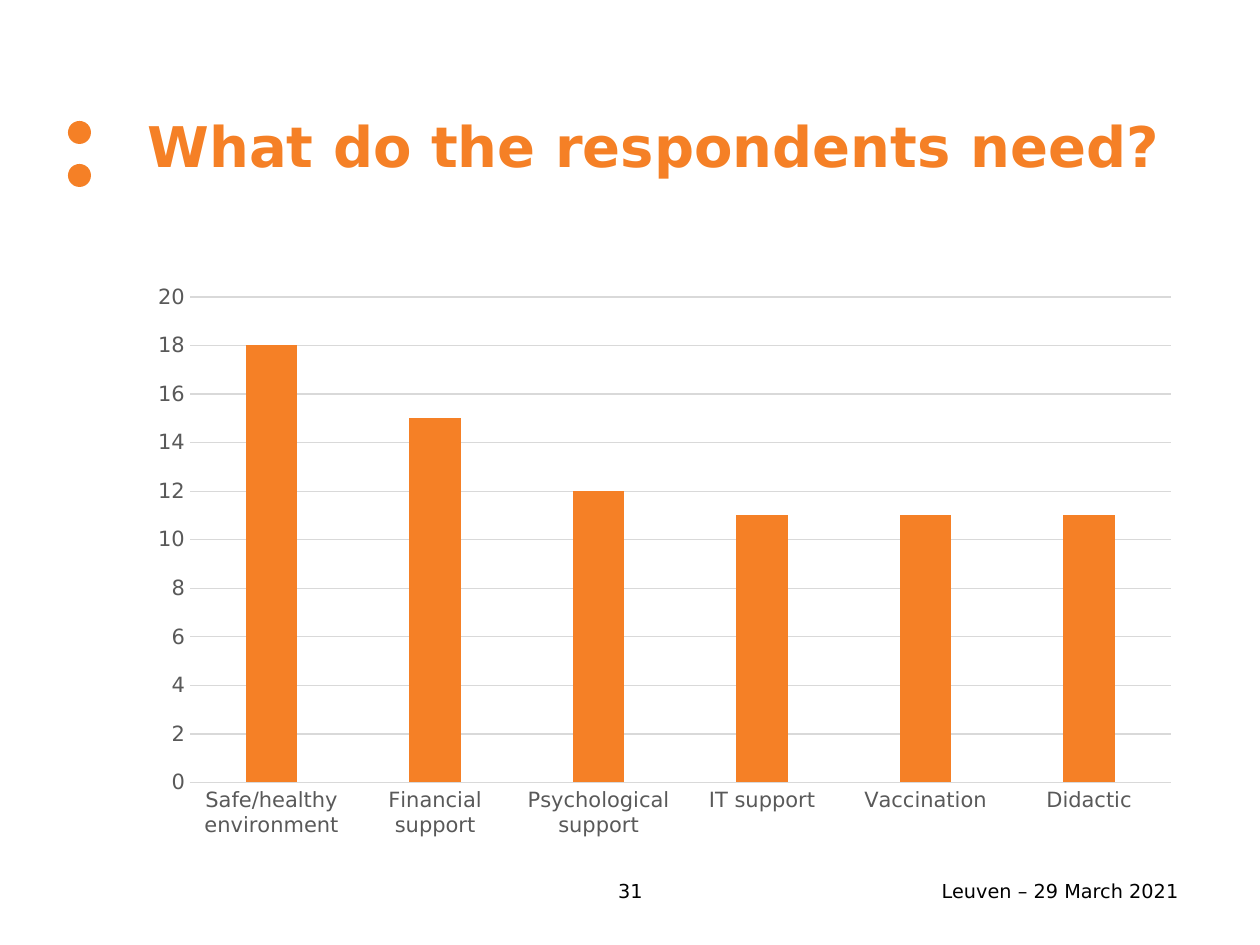
from pptx import Presentation
from pptx import util as u
from pptx.chart import data
from pptx.dml.color import RGBColor
from pptx.enum import chart as ch, shapes, text

FONT = "DejaVu Sans"
ORANGE, GREY, LINE = "F58026", "595959", "D9D9D9"


def px(*vals):
    return [u.Emu(round(v * 914400 / 126)) for v in vals]


def style(font, size, color, bold=False):
    font.name, font.size, font.bold = FONT, u.Pt(size), bold
    font.color.rgb = RGBColor.from_string(color)


prs = Presentation()
prs.slide_width, prs.slide_height = px(1260, 945)
slide = prs.slides.add_slide(prs.slide_layouts[6])

# Two dots beside the title
for top in (121, 164):
    dot = slide.shapes.add_shape(shapes.MSO_SHAPE.OVAL, *px(68, top, 23, 23))
    dot.shadow.inherit = False
    dot.fill.solid()
    dot.fill.fore_color.rgb = RGBColor.from_string(ORANGE)
    dot.line.fill.background()

# Title, date and page number
left, mid, right = text.PP_ALIGN.LEFT, text.PP_ALIGN.CENTER, text.PP_ALIGN.RIGHT
for words, spot, size, color, bold, align in (
    ("What do the respondents need?", (135, 67, 1055, 157), 32, ORANGE, True, left),
    ("Leuven – 29 March 2021", (784, 866, 407, 50), 11, "000000", False, right),
    ("31", (543, 866, 175, 50), 11, "000000", False, mid),
):
    frame = slide.shapes.add_textbox(*px(*spot)).text_frame
    frame.word_wrap = True
    frame.vertical_anchor = text.MSO_ANCHOR.MIDDLE
    frame.text = words
    para = frame.paragraphs[0]
    para.alignment = align
    style(para.runs[0].font, size, color, bold)

# Column chart of needs
needs = data.CategoryChartData()
needs.categories = ["Safe/healthy environment", "Financial support",
                    "Psychological support", "IT support", "Vaccination", "Didactic"]
needs.add_series("Series 1", (18, 15, 12, 11, 11, 11))
chart = slide.shapes.add_chart(
    ch.XL_CHART_TYPE.COLUMN_CLUSTERED, *px(137, 273, 1055, 576), needs).chart
chart.has_title = chart.has_legend = False
style(chart.font, 10, "000000")

plot = chart.plots[0]
plot.gap_width, plot.overlap = 219, -27
plot.vary_by_categories = False
fill = plot.series[0].format.fill
fill.solid()
fill.fore_color.rgb = RGBColor.from_string(ORANGE)

# Axes and gridlines
cat, val = chart.category_axis, chart.value_axis
for axis in (cat, val):
    axis.major_tick_mark = axis.minor_tick_mark = ch.XL_TICK_MARK.NONE
    style(axis.tick_labels.font, 12, GREY)
val.minimum_scale, val.maximum_scale, val.major_unit = 0, 20, 2
val.format.line.fill.background()
for line in (cat.format.line, val.major_gridlines.format.line):
    line.color.rgb = RGBColor.from_string(LINE)
    line.width = u.Pt(0.75)

prs.save("out.pptx")
